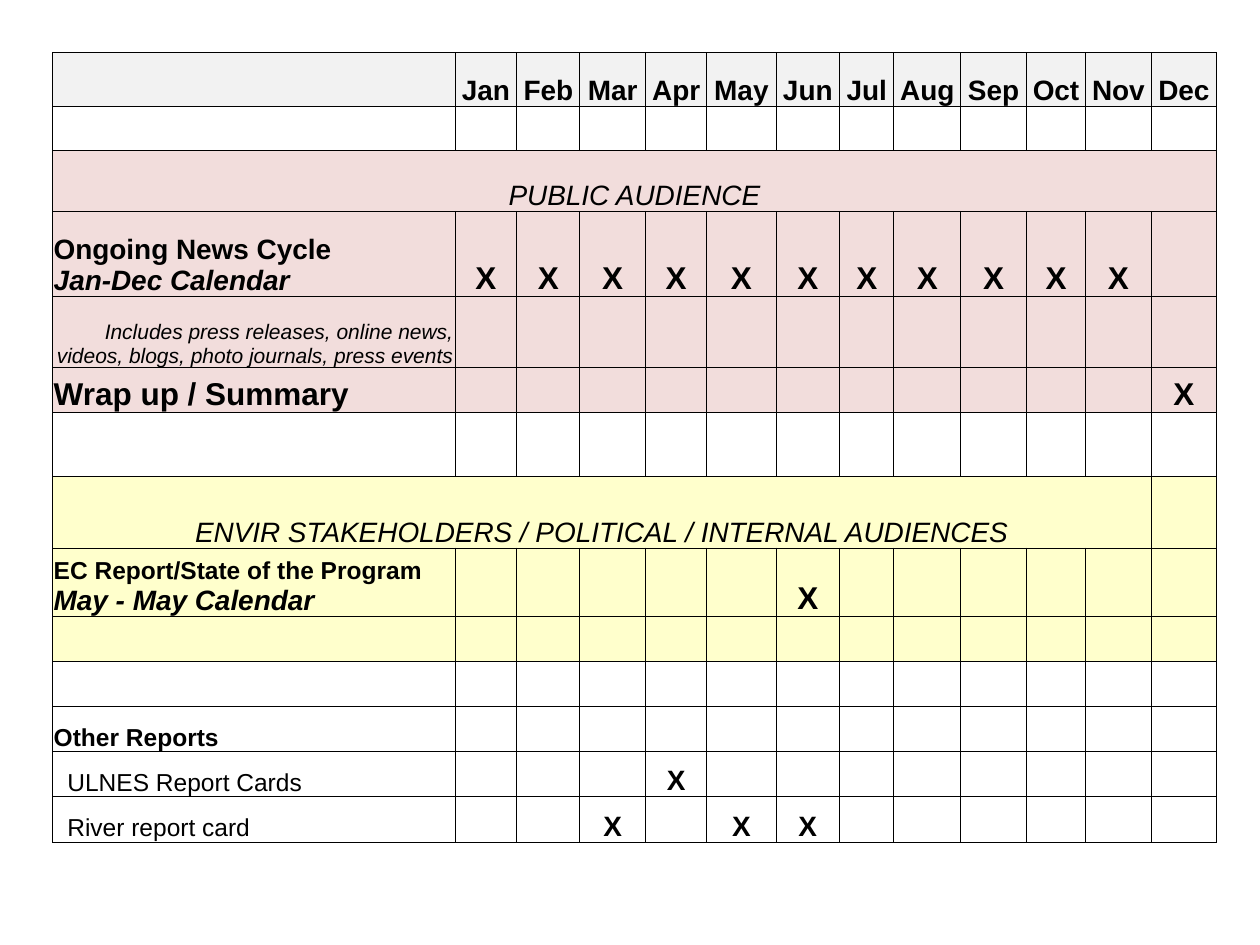
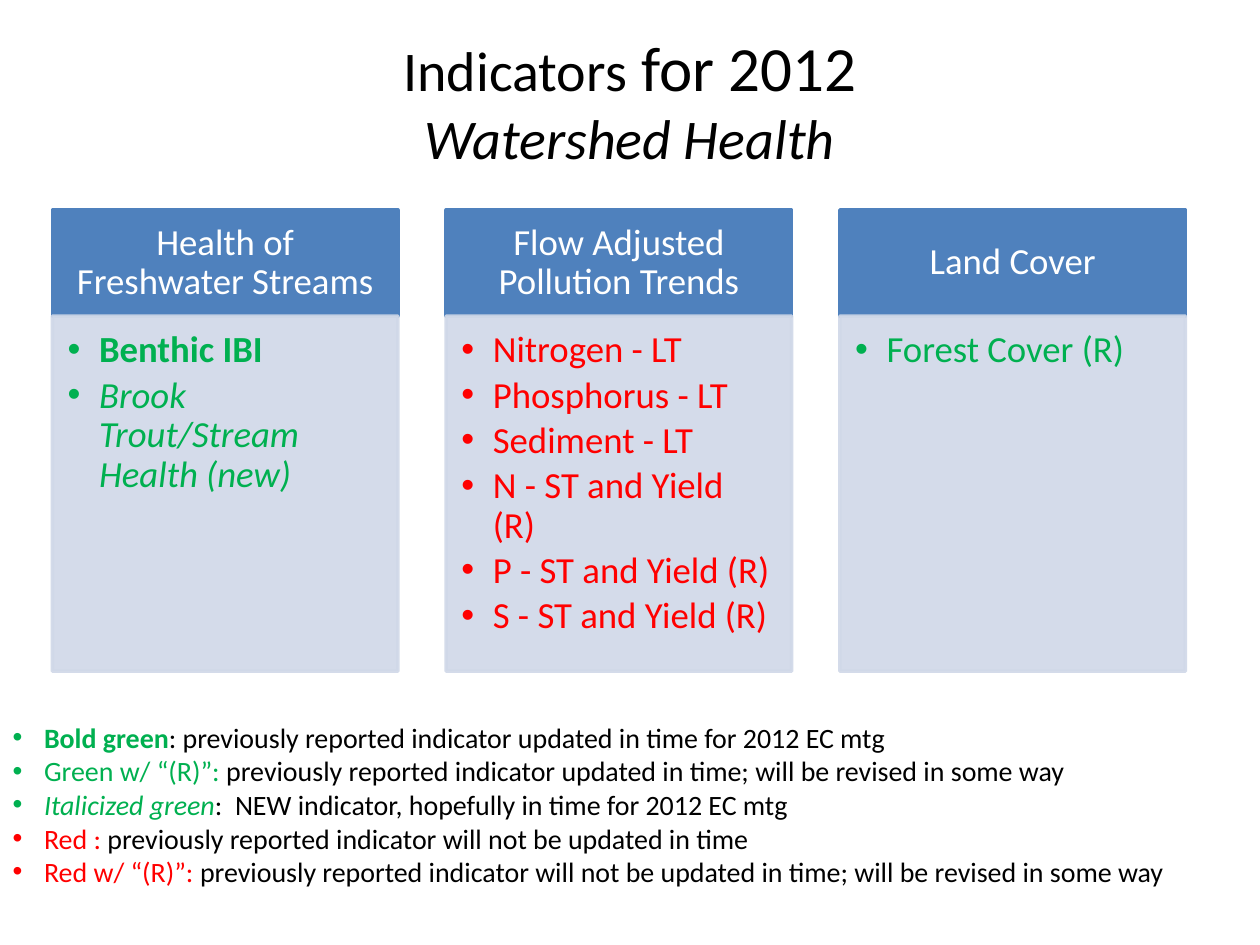
from dataclasses import dataclass
from typing import Any

from lxml.etree import SubElement
from pptx import Presentation
from pptx.dml.color import RGBColor
from pptx.enum.shapes import MSO_SHAPE as Preset
from pptx.enum.text import MSO_ANCHOR as Anchor, MSO_AUTO_SIZE as AutoSize, PP_ALIGN as Align
from pptx.oxml.ns import qn
from pptx.util import Pt

# Shared colours and fonts
BLACK = RGBColor(0x00, 0x00, 0x00)
WHITE = RGBColor(0xFF, 0xFF, 0xFF)
GREY = RGBColor(0xF2, 0xF2, 0xF2)
PINK = RGBColor(0xF2, 0xDD, 0xDC)
YELLOW = RGBColor(0xFF, 0xFF, 0xCC)
BLUE = RGBColor(0x4F, 0x81, 0xBD)
PALE_BLUE = RGBColor(0xD0, 0xD8, 0xE8)
GREEN = RGBColor(0x00, 0xB0, 0x50)
RED = RGBColor(0xFF, 0x00, 0x00)
CALENDAR_FONT = "Arial"
INDICATOR_FONT = "Calibri"


@dataclass(frozen=True)
class Words:
    text: str
    size: float
    color: RGBColor = BLACK
    bold: bool = False
    italic: bool = False
    font: str = INDICATOR_FONT


@dataclass(frozen=True)
class CalendarRow:
    height: float
    fill: RGBColor = WHITE
    label: tuple[Words, ...] = ()  # one entry per paragraph
    align: Align = Align.LEFT
    indent: float = 0.72
    marks: str = ""  # months with an X
    mark_size: float = 18
    span: int = 1


@dataclass(frozen=True)
class IndicatorGroup:
    heading: str
    indicators: tuple[Words, ...]


def apply(target: Any, values: dict[str, Any]) -> None:
    for attribute, value in values.items():
        setattr(target, attribute, value)


def write(paragraph: Any, *parts: Words) -> None:
    for words in parts:
        run = paragraph.add_run()
        run.text = words.text
        apply(run.font, {"name": words.font, "size": Pt(words.size),
                         "bold": words.bold, "italic": words.italic})
        run.font.color.rgb = words.color


def paragraphs(frame: Any, count: int) -> list[Any]:
    return [frame.paragraphs[0]] + [frame.add_paragraph() for _ in range(count - 1)]


def add_bullet(paragraph: Any) -> None:
    properties = paragraph._p.get_or_add_pPr()
    properties.set("marL", str(Pt(18)))
    properties.set("indent", str(Pt(-18)))
    SubElement(properties, qn("a:buFont"), typeface="Arial")
    SubElement(properties, qn("a:buChar"), char="•")


# Calendar slide
def label(text: str, size: float = 16, bold: bool = True, italic: bool = False) -> Words:
    return Words(text, size, bold=bold, italic=italic, font=CALENDAR_FONT)


MONTHS = "Jan Feb Mar Apr May Jun Jul Aug Sep Oct Nov Dec".split()
COLUMN_WIDTHS = [230, 35.4, 36, 37.6, 35, 39.5, 36.4, 31, 38.2, 37.6, 33.8, 37.6, 37.2]
CELL_FORMAT = {"vertical_anchor": Anchor.BOTTOM, "margin_left": Pt(0.72),
               "margin_right": Pt(0.72), "margin_top": Pt(0.72), "margin_bottom": 0}
CALENDAR = [
    CalendarRow(31, GREY),
    CalendarRow(24.8),
    CalendarRow(35, PINK, (label("PUBLIC AUDIENCE", bold=False, italic=True),),
                Align.CENTER, span=13),
    CalendarRow(48.5, PINK, (label("Ongoing News Cycle"),
                             label("Jan-Dec Calendar", italic=True)),
                marks=" ".join(MONTHS[:-1])),
    CalendarRow(40.8, PINK, (label("Includes press releases, online news, videos, blogs, "
                                   "photo journals, press events", 12, False, True),),
                Align.RIGHT),
    CalendarRow(25.8, PINK, (label("Wrap up / Summary", 18),), marks="Dec"),
    CalendarRow(36.4),
    CalendarRow(41, YELLOW, (label("ENVIR STAKEHOLDERS / POLITICAL / INTERNAL AUDIENCES",
                                   bold=False, italic=True),), Align.CENTER, span=12),
    CalendarRow(39, YELLOW, (label("EC Report/State of the Program", 14),
                             label("May - May Calendar", italic=True)), marks="Jun"),
    CalendarRow(25.8, YELLOW),
    CalendarRow(25.8),
    CalendarRow(25.8, label=(label("Other Reports", 14),)),
    CalendarRow(25.8, label=(label("ULNES Report Cards", 14, False),), indent=8.5,
                marks="Apr", mark_size=16),
    CalendarRow(25.8, label=(label("River report card", 14, False),), indent=8.5,
                marks="Mar May Jun", mark_size=16),
]


def style_cell(cell: Any, fill: RGBColor) -> None:
    apply(cell, CELL_FORMAT)
    properties = cell._tc.get_or_add_tcPr()
    for side in ("lnL", "lnR", "lnT", "lnB"):
        border = SubElement(properties, qn(f"a:{side}"), w=str(Pt(0.5)))
        ink = SubElement(border, qn("a:solidFill"))
        SubElement(ink, qn("a:srgbClr"), val=str(BLACK))
    cell.fill.solid()
    cell.fill.fore_color.rgb = fill


def fill_cell(cell: Any, lines: tuple[Words, ...], align: Align) -> None:
    for paragraph, words in zip(paragraphs(cell.text_frame, len(lines)), lines):
        paragraph.alignment = align
        write(paragraph, words)


def build_calendar(deck: Any) -> None:
    slide = deck.slides.add_slide(deck.slide_layouts[6])
    calendar = slide.shapes.add_table(
        len(CALENDAR), len(COLUMN_WIDTHS), Pt(30), Pt(30), Pt(sum(COLUMN_WIDTHS)),
        Pt(sum(row.height for row in CALENDAR))).table
    apply(calendar, {"first_row": False, "horz_banding": False})
    for column, width in zip(calendar.columns, COLUMN_WIDTHS):
        column.width = Pt(width)

    for index, row in enumerate(CALENDAR):
        calendar.rows[index].height = Pt(row.height)
        cells = [calendar.cell(index, column) for column in range(len(COLUMN_WIDTHS))]
        for cell in cells:
            style_cell(cell, row.fill)
        if row.span > 1:
            cells[0].merge(cells[row.span - 1])
        cells[0].margin_left = Pt(row.indent)
        if row.label:
            fill_cell(cells[0], row.label, row.align)
        for month, cell in zip(MONTHS, cells[1:]):
            if index == 0:
                fill_cell(cell, (label(month),), Align.CENTER)
            elif month in row.marks.split():
                fill_cell(cell, (label("X", row.mark_size),), Align.CENTER)


# Indicator slide
def indicators(color: RGBColor, *names: str) -> tuple[Words, ...]:
    return tuple(Words(name, 21, color) for name in names)


GROUPS = [
    IndicatorGroup("Health of Freshwater Streams", (
        Words("Benthic IBI", 21, GREEN, bold=True),
        Words("Brook Trout/Stream Health (new)", 21, GREEN, italic=True))),
    IndicatorGroup("Flow Adjusted Pollution Trends", indicators(
        RED, "Nitrogen - LT", "Phosphorus - LT", "Sediment - LT",
        "N - ST and Yield (R)", "P - ST and Yield (R)", "S - ST and Yield (R)")),
    IndicatorGroup("Land Cover", indicators(GREEN, "Forest Cover (R)")),
]
LEGEND = [
    (Words("Bold green", 16, GREEN, bold=True),
     ": previously reported indicator updated in time for 2012 EC mtg"),
    (Words("Green w/ “(R)”: ", 16, GREEN),
     "previously reported indicator updated in time; will be revised in some way"),
    (Words("Italicized green", 16, GREEN, italic=True),
     ":  NEW indicator, hopefully in time for 2012 EC mtg"),
    (Words("Red : ", 16, RED), "previously reported indicator will not be updated in time"),
    (Words("Red w/ “(R)”: ", 16, RED),
     "previously reported indicator will not be updated in time; "
     "will be revised in some way"),
]
GROUP_LEFT, GROUP_TOP, GROUP_WIDTH, GROUP_PITCH = 30, 120, 197.4, 225
HEADING_HEIGHT, LIST_HEIGHT = 60.6, 203
HEADING_FORMAT = {"vertical_anchor": Anchor.MIDDLE, "word_wrap": True,
                  "margin_left": Pt(11.5), "margin_right": Pt(11.5),
                  "margin_top": Pt(6.5), "margin_bottom": Pt(6.5)}
LIST_FORMAT = {"vertical_anchor": Anchor.TOP, "word_wrap": True,
               "margin_left": Pt(8.64), "margin_right": Pt(11.5),
               "margin_top": Pt(8.64), "margin_bottom": Pt(13)}


def place(shape: Any, left: float, top: float, width: float, height: float) -> None:
    apply(shape, {"left": Pt(left), "top": Pt(top), "width": Pt(width), "height": Pt(height)})


def add_panel(slide: Any, left: float, top: float, height: float, color: RGBColor,
              frame_format: dict[str, Any], opacity: int = 100) -> Any:
    panel = slide.shapes.add_shape(Preset.RECTANGLE, Pt(left), Pt(top),
                                   Pt(GROUP_WIDTH), Pt(height))
    panel.shadow.inherit = False
    panel.fill.solid()
    panel.fill.fore_color.rgb = color
    panel.line.color.rgb = color
    panel.line.width = Pt(2)
    if opacity < 100:
        for tint in panel._element.spPr.iter(qn("a:srgbClr")):
            SubElement(tint, qn("a:alpha"), val=str(opacity * 1000))
    apply(panel.text_frame, frame_format)
    return panel.text_frame


def add_group(slide: Any, group: IndicatorGroup, left: float) -> None:
    heading = add_panel(slide, left, GROUP_TOP, HEADING_HEIGHT, BLUE, HEADING_FORMAT)
    apply(heading.paragraphs[0], {"alignment": Align.CENTER, "line_spacing": 0.9})
    write(heading.paragraphs[0], Words(group.heading, 21, WHITE))

    body = add_panel(slide, left, GROUP_TOP + HEADING_HEIGHT, LIST_HEIGHT, PALE_BLUE,
                     LIST_FORMAT, opacity=90)
    for paragraph, words in zip(paragraphs(body, len(group.indicators)), group.indicators):
        apply(paragraph, {"alignment": Align.LEFT, "line_spacing": 0.9,
                          "space_after": Pt(3.15)})
        add_bullet(paragraph)
        write(paragraph, words)


def build_indicators(deck: Any) -> None:
    slide = deck.slides.add_slide(deck.slide_layouts[1])

    # Title
    title = slide.shapes.title
    place(title, 36, 12, 648, 90)
    apply(title.text_frame, {"auto_size": AutoSize.NONE, "vertical_anchor": Anchor.MIDDLE})
    heading = title.text_frame.paragraphs[0]
    heading.alignment = Align.CENTER
    write(heading, Words("Indicators", 32), Words(" for 2012", 36))
    heading.add_line_break()
    write(heading, Words("Watershed Health", 32, italic=True))

    # Indicator columns
    for index, group in enumerate(GROUPS):
        add_group(slide, group, GROUP_LEFT + index * GROUP_PITCH)

    # Legend
    legend = slide.placeholders[1]
    place(legend, 0, 408, 720, 104.4)
    legend.text_frame.auto_size = AutoSize.NONE
    for paragraph, (key, meaning) in zip(paragraphs(legend.text_frame, len(LEGEND)), LEGEND):
        paragraph.space_before = Pt(0)
        add_bullet(paragraph)
        write(paragraph, key, Words(meaning, 16))


def main() -> None:
    deck = Presentation()
    apply(deck, {"slide_width": Pt(720), "slide_height": Pt(540)})
    build_calendar(deck)
    build_indicators(deck)
    deck.save("out.pptx")


if __name__ == "__main__":
    main()
